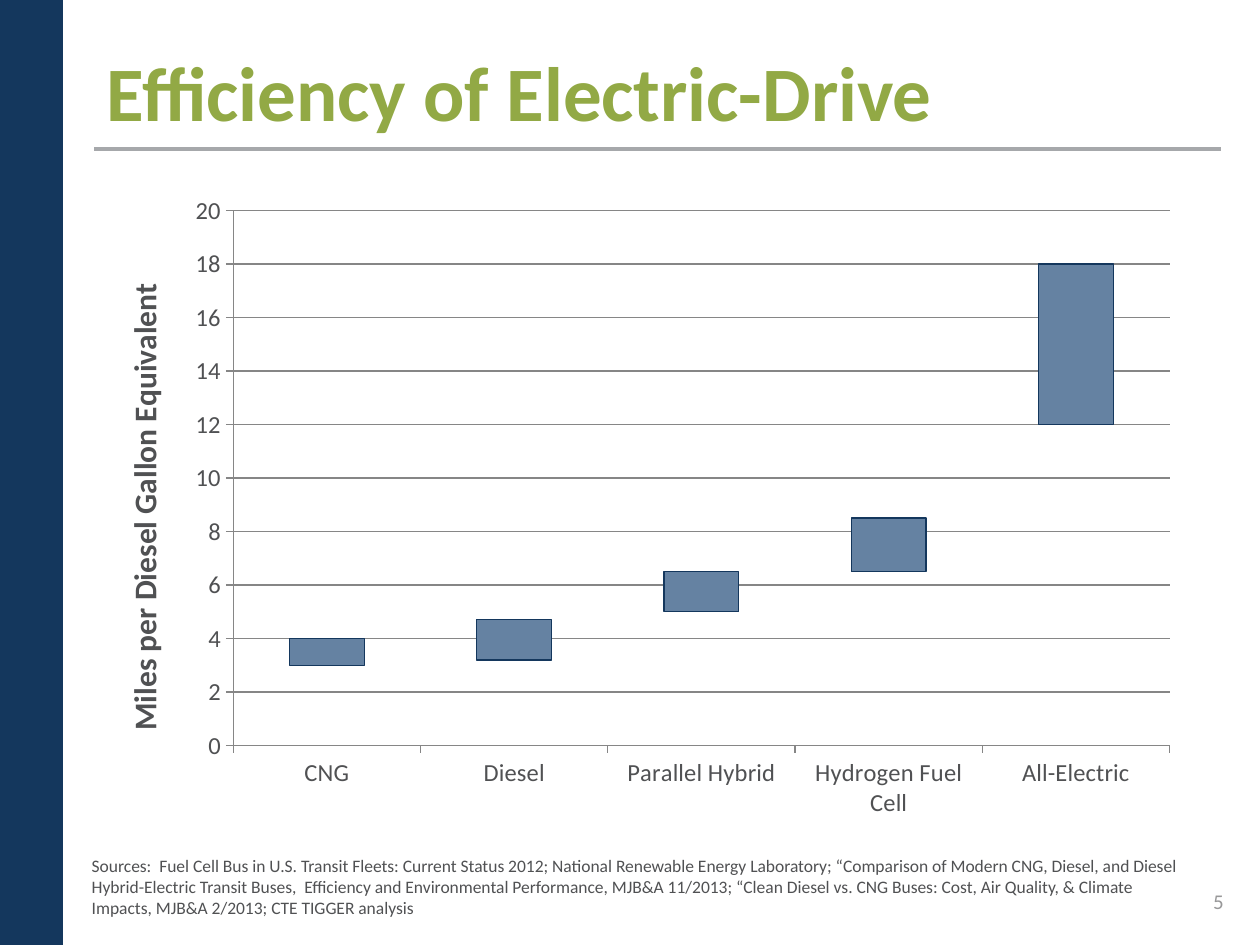
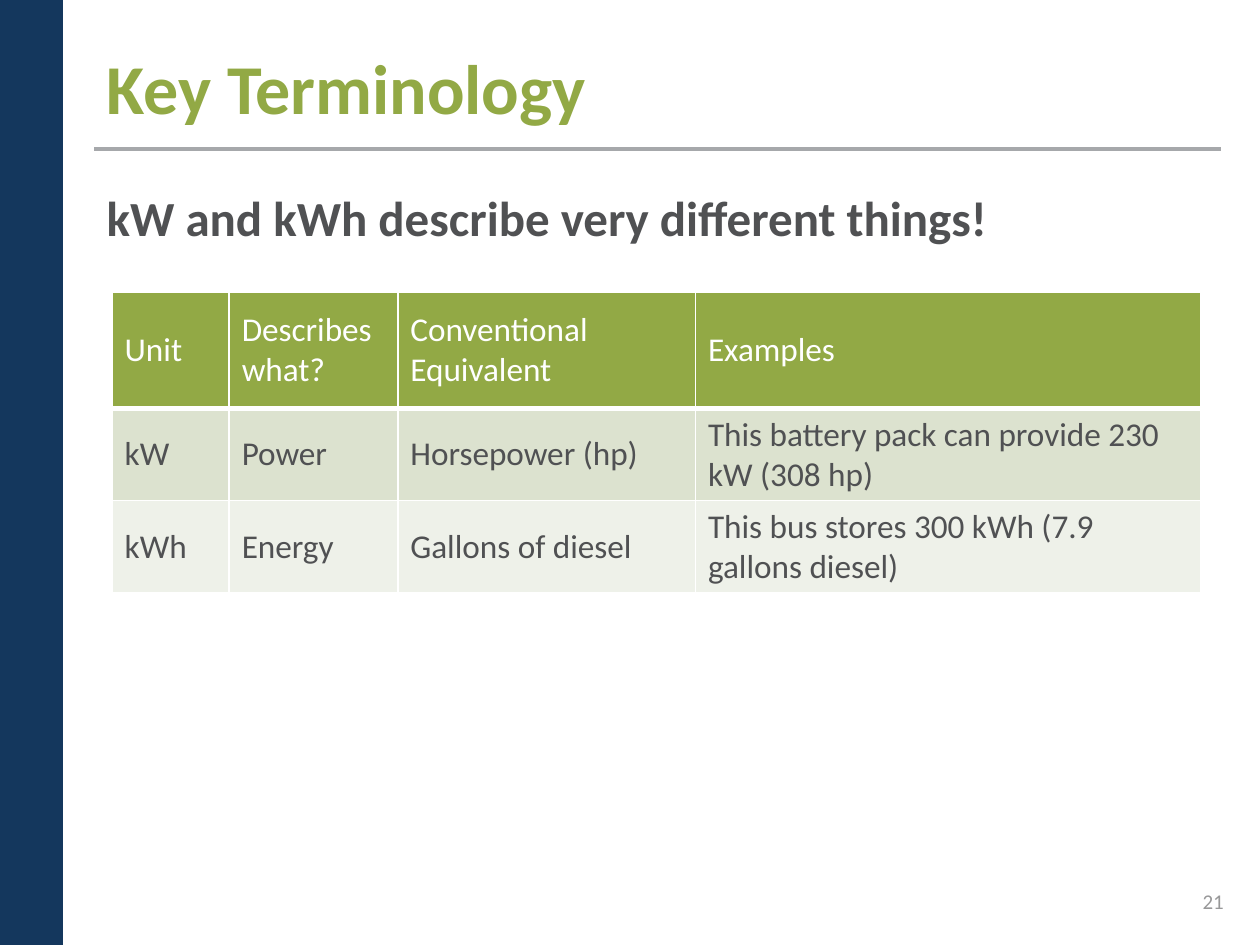
"""Build two slides on electric-drive efficiency and energy units."""
from lxml import etree
from pptx import Presentation
from pptx import util as u
from pptx.chart import data as cd
from pptx.dml import color as col
from pptx.enum import chart as ch
from pptx.enum import shapes, text
from pptx.oxml import ns

COLORS = {"navy": "14375D", "green": "92A945", "rule": "A6A8AB", "text": "505153",
          "muted": "989899", "steel": "6582A2", "axis": "868686", "white": "FFFFFF",
          "row_dark": "DCE2CF", "row_light": "EEF1E9"}
FONT = "Calibri"


def rgb(name):
    return col.RGBColor.from_string(COLORS[name])


class Deck:
    def __init__(self):
        self.prs = Presentation()
        self.prs.slide_width, self.prs.slide_height = u.Cm(25.4), u.Cm(19.05)
        self.s = None

    def style(self, font, size, color="text", bold=False):
        font.name, font.size, font.bold = FONT, u.Pt(size), bold
        font.color.rgb = rgb(color)

    def slide(self, title, number, title_size):
        self.s = self.prs.slides.add_slide(self.prs.slide_layouts[6])
        self.band(0, 0, 1.27, 19.05)
        self.rule(1.9, 3, 24.61)
        self.text(title, 1.9, 0.78, 20.4, 2.24, title_size, "green", True)
        sp = self.text(str(number), 19, 17.65, 5.92, 1.02, 12, "muted")
        sp.text_frame.vertical_anchor = text.MSO_ANCHOR.MIDDLE
        sp.text_frame.paragraphs[0].alignment = text.PP_ALIGN.RIGHT

    def band(self, x, y, w, h):
        sp = self.s.shapes.add_shape(shapes.MSO_SHAPE.RECTANGLE, *map(u.Cm, (x, y, w, h)))
        sp.shadow.inherit = False
        sp.fill.solid()
        sp.fill.fore_color.rgb = rgb("navy")
        sp.line.fill.background()

    def rule(self, x, y, x2):
        line = self.s.shapes.add_connector(shapes.MSO_CONNECTOR.STRAIGHT,
                                           *map(u.Cm, (x, y, x2, y)))
        line.line.color.rgb, line.line.width = rgb("rule"), u.Pt(2)
        etree.SubElement(line._element.spPr, ns.qn("a:effectLst"))

    def text(self, words, x, y, w, h, size, color="text", bold=False):
        sp = self.s.shapes.add_textbox(*map(u.Cm, (x, y, w, h)))
        tf = sp.text_frame
        tf.word_wrap = True
        tf.text = words
        self.style(tf.paragraphs[0].runs[0].font, size, color, bold)
        return sp

    def range_chart(self, ranges, axis_title, top, step, x, y, w, h):
        data = cd.CategoryChartData()
        data.categories = list(ranges)
        data.add_series("Series 1", [low for low, _ in ranges.values()])
        data.add_series("Series 2", [span for _, span in ranges.values()])
        chart = self.s.shapes.add_chart(ch.XL_CHART_TYPE.COLUMN_STACKED,
                                        *map(u.Cm, (x, y, w, h)), data).chart
        chart.has_legend = chart.has_title = False
        self.style(chart.font, 18)
        plot = chart.plots[0]
        plot.gap_width, plot.overlap, plot.vary_by_categories = 150, 100, False
        base, span = plot.series
        base.format.fill.background()
        base.format.line.fill.background()
        span.format.fill.solid()
        span.format.fill.fore_color.rgb = rgb("steel")
        span.format.line.color.rgb, span.format.line.width = rgb("navy"), u.Pt(0.75)
        values = chart.value_axis
        values.minimum_scale, values.maximum_scale, values.major_unit = 0, top, step
        values.has_major_gridlines = True
        for axis in (chart.category_axis, values):
            axis.major_tick_mark = ch.XL_TICK_MARK.OUTSIDE
            self.style(axis.tick_labels.font, 14)
            axis.format.line.color.rgb = rgb("axis")
        values.major_gridlines.format.line.color.rgb = rgb("axis")
        tf = values.axis_title.text_frame
        tf.text = axis_title
        self.style(tf.paragraphs[0].runs[0].font, 18, bold=True)

    def border(self, cell, bottom):
        tc_pr = cell._tc.get_or_add_tcPr()
        for side, width in (("L", 1), ("R", 1), ("T", 1), ("B", bottom)):
            ln = etree.SubElement(tc_pr, ns.qn(f"a:ln{side}"), w=str(u.Pt(width)))
            fill = etree.SubElement(ln, ns.qn("a:solidFill"))
            etree.SubElement(fill, ns.qn("a:srgbClr"), val=COLORS["white"])

    def table(self, rows, widths, heights, fills, x, y):
        tbl = self.s.shapes.add_table(len(rows), len(widths), u.Cm(x), u.Cm(y),
                                      u.Cm(sum(widths)), u.Cm(sum(heights))).table
        tbl.horz_banding = False
        for column, width in zip(tbl.columns, widths):
            column.width = u.Cm(width)
        for i, words in enumerate(rows):
            tbl.rows[i].height = u.Cm(heights[i])
            for j, word in enumerate(words):
                cell = tbl.cell(i, j)
                self.border(cell, 1 if i else 3)
                cell.fill.solid()
                cell.fill.fore_color.rgb = rgb(fills[i])
                cell.vertical_anchor = text.MSO_ANCHOR.MIDDLE
                cell.text_frame.text = word
                self.style(cell.text_frame.paragraphs[0].runs[0].font, 19,
                           "text" if i else "white")


def main():
    deck = Deck()
    deck.slide("Efficiency of Electric-Drive", 5, 44)
    deck.range_chart({"CNG": (3, 1), "Diesel": (3.2, 1.5), "Parallel Hybrid": (5, 1.5),
                      "Hydrogen Fuel Cell": (6.5, 2), "All-Electric": (12, 6)},
                     "Miles per Diesel Gallon Equivalent", 20, 2, 1.9, 3.68, 22.12, 13.08)
    deck.text("Sources:  Fuel Cell Bus in U.S. Transit Fleets: Current Status 2012; "
              "National Renewable Energy Laboratory; “Comparison of Modern CNG, Diesel, "
              "and Diesel Hybrid-Electric Transit Buses,  Efficiency and Environmental "
              "Performance, MJB&A 11/2013; “Clean Diesel vs. CNG Buses: Cost, Air Quality, "
              "& Climate Impacts, MJB&A 2/2013; CTE TIGGER analysis",
              1.6, 17.12, 22.43, 1.55, 10)

    deck.slide("Key Terminology", 21, 40)
    deck.text("kW and kWh describe very different things!", 1.9, 3.65, 23, 13.87, 28, bold=True)
    deck.table([("Unit", "Describes what?", "Conventional Equivalent", "Examples"),
                ("kW", "Power", "Horsepower (hp)",
                 "This battery pack can provide 230 kW (308 hp)"),
                ("kWh", "Energy", "Gallons of diesel",
                 "This bus stores 300 kWh (7.9 gallons diesel)")],
               (2.36, 3.4, 6, 10.19), (2.34, 1.86, 1.86),
               ("green", "row_dark", "row_light"), 2.26, 5.89)
    deck.prs.save("out.pptx")


if __name__ == "__main__":
    main()
